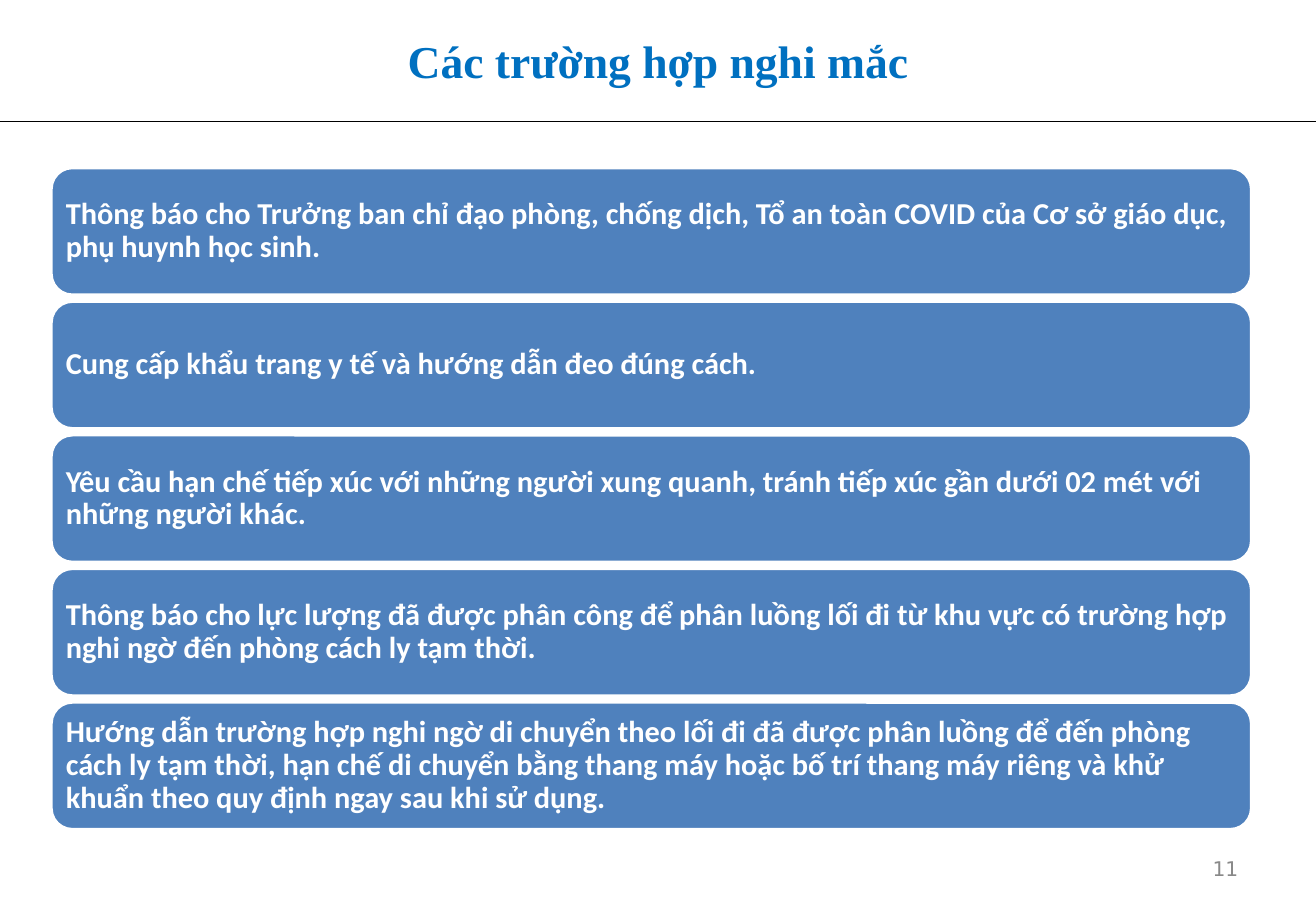
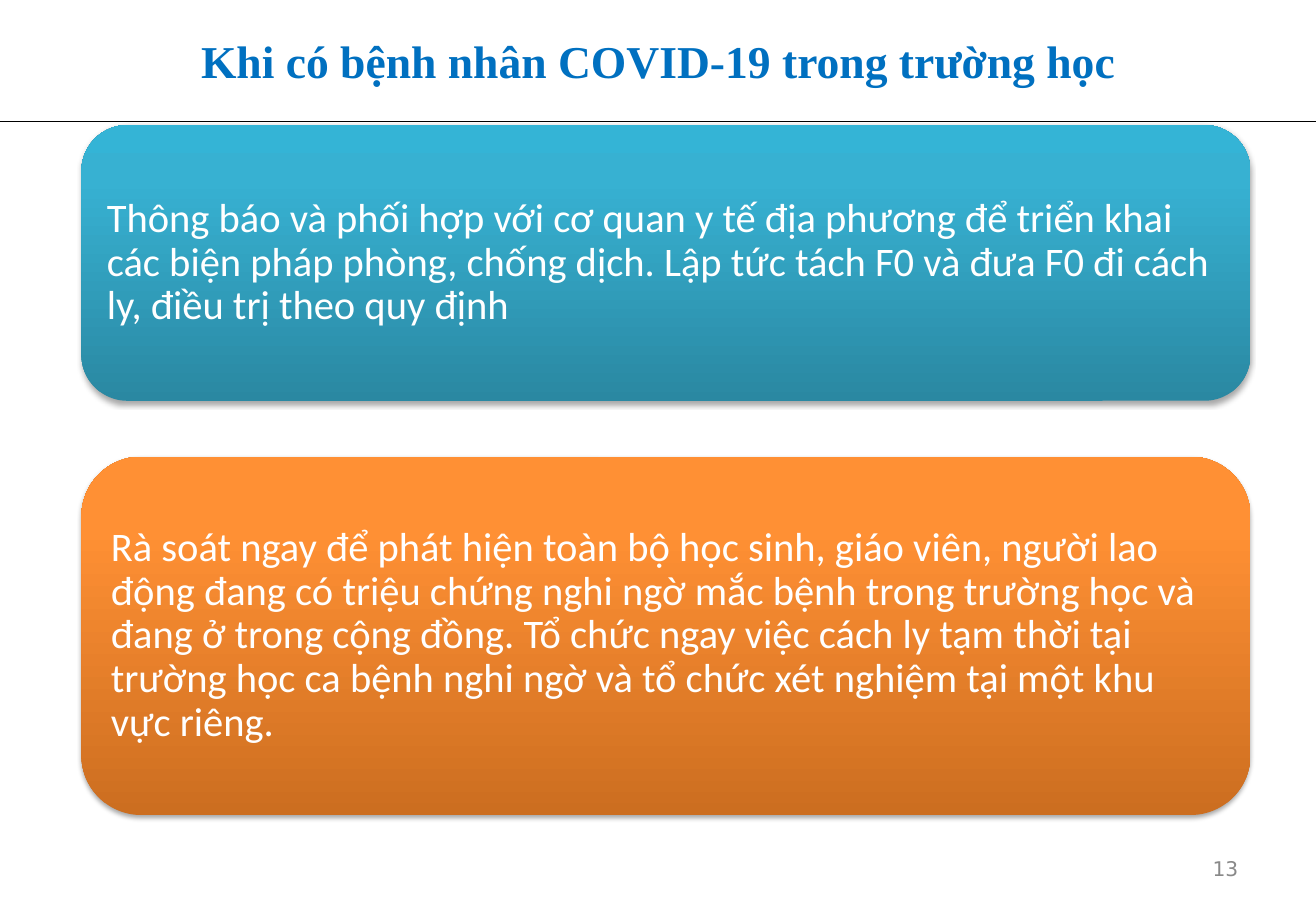
import copy
from dataclasses import dataclass

import lxml.etree
import pptx
import pptx.dml.color
import pptx.enum.shapes
import pptx.enum.text
import pptx.oxml.ns
import pptx.util
from pptx.util import Inches

SLIDE_WIDTH, SLIDE_HEIGHT = 10.83, 7.5
WHITE, BLACK = "FFFFFF", "000000"
TITLE_BLUE, STEP_BLUE, NUMBER_GREY = "0070C0", "4F81BD", "898989"
TEAL = ((0, "2A88A2"), (0.8, "37B1D2"), (1, "34B4D6"))
ORANGE = ((0, "CC6E20"), (0.8, "FF9034"), (1, "FF9136"))
ALIGN = pptx.enum.text.PP_ALIGN
STEP_TOP, STEP_HEIGHT, STEP_PITCH = 1.38, 1.05, 1.1


@dataclass(frozen=True)
class Style:
    font: str
    size: float
    color: str
    bold: bool = False
    align: ALIGN = ALIGN.LEFT
    spacing: float = 1.0


@dataclass(frozen=True)
class Box:
    left: float
    top: float
    width: float
    height: float

    def lengths(self) -> tuple:
        return tuple(Inches(n) for n in (self.left, self.top, self.width, self.height))


@dataclass(frozen=True)
class Measure:
    box: Box
    stops: tuple
    text: str


TITLE = Style("Times New Roman", 27, TITLE_BLUE, True, ALIGN.CENTER)
NUMBER = Style("DejaVu Sans", 12, NUMBER_GREY, align=ALIGN.RIGHT)
STEP = Style("Calibri", 18, WHITE, True, spacing=0.9)
MEASURE = Style("Calibri", 24, WHITE, spacing=0.9)

STEPS = (
    "Thông báo cho Trưởng ban chỉ đạo phòng, chống dịch, Tổ an toàn COVID của Cơ sở giáo dục, "
    "phụ huynh học sinh.",
    "Cung cấp khẩu trang y tế và hướng dẫn đeo đúng cách.",
    "Yêu cầu hạn chế tiếp xúc với những người xung quanh, tránh tiếp xúc gần dưới 02 mét với "
    "những người khác.",
    "Thông báo cho lực lượng đã được phân công để phân luồng lối đi từ khu vực có trường hợp "
    "nghi ngờ đến phòng cách ly tạm thời.",
    "Hướng dẫn trường hợp nghi ngờ di chuyển theo lối đi đã được phân luồng để đến phòng "
    "cách ly tạm thời, hạn chế di chuyển bằng thang máy hoặc bố trí thang máy riêng và khử "
    "khuẩn theo quy định ngay sau khi sử dụng.",
)
MEASURES = (
    Measure(
        Box(0.67, 1.03, 9.62, 2.27), TEAL,
        "Thông báo và phối hợp với cơ quan y tế địa phương để triển khai các biện pháp phòng, "
        "chống dịch. Lập tức tách F0 và đưa F0 đi cách ly, điều trị theo quy định",
    ),
    Measure(
        Box(0.67, 3.76, 9.62, 2.95), ORANGE,
        "Rà soát ngay để phát hiện toàn bộ học sinh, giáo viên, người lao động đang có triệu "
        "chứng nghi ngờ mắc bệnh trong trường học và đang ở trong cộng đồng. Tổ chức ngay việc "
        "cách ly tạm thời tại trường học ca bệnh nghi ngờ và tổ chức xét nghiệm tại một khu "
        "vực riêng.",
    ),
)


def rgb(color: str) -> pptx.dml.color.RGBColor:
    return pptx.dml.color.RGBColor.from_string(color)


def write(shape, text: str, style: Style, inset: float | None = None) -> None:
    frame = shape.text_frame
    frame.word_wrap = True
    frame.vertical_anchor = pptx.enum.text.MSO_ANCHOR.MIDDLE
    if inset is not None:
        frame.margin_left = frame.margin_right = Inches(inset)
        frame.margin_top = frame.margin_bottom = Inches(inset)
    paragraph = frame.paragraphs[0]
    paragraph.text = text
    paragraph.alignment = style.align
    paragraph.line_spacing = style.spacing
    paragraph.font.name = style.font
    paragraph.font.size = pptx.util.Pt(style.size)
    paragraph.font.bold = style.bold
    paragraph.font.color.rgb = rgb(style.color)


def add_label(slide, box: Box, text: str, style: Style) -> None:
    write(slide.shapes.add_textbox(*box.lengths()), text, style)


def add_page(deck, title: str, number: str):
    slide = deck.slides.add_slide(deck.slide_layouts[6])
    rule = slide.shapes.add_connector(
        pptx.enum.shapes.MSO_CONNECTOR.STRAIGHT,
        Inches(0), Inches(1), Inches(SLIDE_WIDTH), Inches(1),
    )
    rule.line.color.rgb = rgb(BLACK)
    rule.line.width = pptx.util.Pt(0.75)
    lxml.etree.SubElement(rule._element.spPr, pptx.oxml.ns.qn("a:effectLst"))
    add_label(slide, Box(0, 0.08, SLIDE_WIDTH, 0.83), title, TITLE)
    add_label(slide, Box(7.76, 6.95, 2.53, 0.4), number, NUMBER)
    return slide


def add_panel(slide, box: Box):
    panel = slide.shapes.add_shape(
        pptx.enum.shapes.MSO_SHAPE.ROUNDED_RECTANGLE, *box.lengths()
    )
    panel.shadow.inherit = False
    return panel


def add_step(slide, box: Box, text: str) -> None:
    panel = add_panel(slide, box)
    panel.fill.solid()
    panel.fill.fore_color.rgb = rgb(STEP_BLUE)
    panel.line.color.rgb = rgb(WHITE)
    panel.line.width = pptx.util.Pt(2)
    write(panel, text, STEP, 0.07)


def add_measure(slide, measure: Measure) -> None:
    qn = pptx.oxml.ns.qn
    panel = add_panel(slide, measure.box)
    panel.line.fill.background()
    panel.fill.gradient()
    panel.fill.gradient_angle = 90
    properties = panel._element.spPr
    stop_list = properties.find(".//" + qn("a:gsLst"))
    stop_list.append(copy.deepcopy(stop_list[0]))
    for stop, (position, color) in zip(panel.fill.gradient_stops, measure.stops):
        stop.position = position
        stop.color.rgb = rgb(color)
    shadow = lxml.etree.SubElement(
        properties.find(qn("a:effectLst")), qn("a:outerShdw"),
        blurRad=str(pptx.util.Pt(3.1)), dist=str(pptx.util.Pt(1.8)),
        dir="5400000", rotWithShape="0",
    )
    shade = lxml.etree.SubElement(shadow, qn("a:srgbClr"), val=BLACK)
    lxml.etree.SubElement(shade, qn("a:alpha"), val="35000")
    write(panel, measure.text, MEASURE, 0.1)


def main() -> None:
    deck = pptx.Presentation()
    deck.slide_width = Inches(SLIDE_WIDTH)
    deck.slide_height = Inches(SLIDE_HEIGHT)

    suspected = add_page(deck, "Các trường hợp nghi mắc", "11")
    for index, text in enumerate(STEPS):
        top = STEP_TOP + index * STEP_PITCH
        add_step(suspected, Box(0.42, top, 9.88, STEP_HEIGHT), text)

    confirmed = add_page(deck, "Khi có bệnh nhân COVID-19 trong trường học", "13")
    for measure in MEASURES:
        add_measure(confirmed, measure)

    deck.save("out.pptx")


if __name__ == "__main__":
    main()
